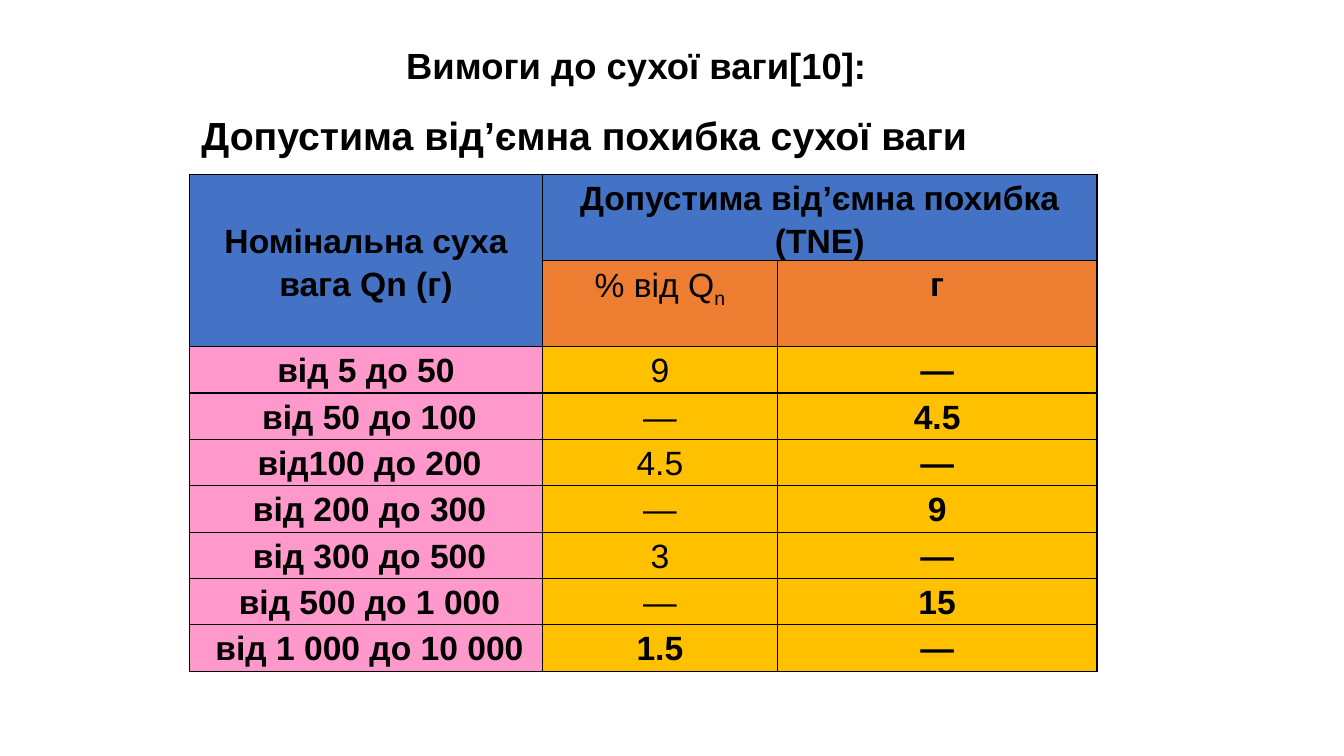
import pptx
import pptx.dml.color
import pptx.enum.text
import pptx.oxml
import pptx.oxml.ns
import pptx.util

Inches = pptx.util.Inches
Pt = pptx.util.Pt
Align = pptx.enum.text.PP_ALIGN
Anchor = pptx.enum.text.MSO_ANCHOR
AutoSize = pptx.enum.text.MSO_AUTO_SIZE

BLACK, BLUE, ORANGE, PINK, GOLD = "000000", "4472C4", "ED7D31", "FF99CC", "FFC000"


def color(value):
    return pptx.dml.color.RGBColor.from_string(value)


class SlideBuilder:
    font_name = "Arial"
    cell_size = 24

    def __init__(self, slide):
        self.slide = slide

    def style_run(self, run, size, bold=True):
        run.font.name = self.font_name
        run.font.size = Pt(size)
        run.font.bold = bold
        run.font.color.rgb = color(BLACK)

    def heading(self, text, left, top, width, height, size, wrap=True, align=None):
        box = self.slide.shapes.add_textbox(
            Inches(left), Inches(top), Inches(width), Inches(height))
        frame = box.text_frame
        frame.word_wrap = wrap
        frame.auto_size = AutoSize.SHAPE_TO_FIT_TEXT
        frame.text = text
        frame.paragraphs[0].alignment = align
        self.style_run(frame.paragraphs[0].runs[0], size)

    def table(self, left, top, height, widths, heights):
        frame = self.slide.shapes.add_table(
            len(heights), len(widths), Inches(left), Inches(top),
            Inches(sum(widths)), Inches(height))
        table = frame.table
        for column, width in zip(table.columns, widths):
            column.width = Inches(width)
        for row, row_height in zip(table.rows, heights):
            row.height = Inches(row_height)
        frame.height = Inches(height)
        for cell in table.iter_cells():
            self.borders(cell)
        return table

    def borders(self, cell):
        properties = cell._tc.get_or_add_tcPr()
        for side in ("lnL", "lnR", "lnT", "lnB"):
            properties.append(pptx.oxml.parse_xml(
                f'<a:{side} {pptx.oxml.ns.nsdecls("a")} w="{Pt(1)}"><a:solidFill>'
                f'<a:srgbClr val="{BLACK}"/></a:solidFill></a:{side}>'))

    def cell(self, cell, text, fill, bold=True, anchor=Anchor.TOP, indent=0, subscript=""):
        cell.fill.solid()
        cell.fill.fore_color.rgb = color(fill)
        cell.vertical_anchor = anchor
        cell.margin_left = cell.margin_right = Inches(0.07)
        cell.margin_top = cell.margin_bottom = 0
        cell.text_frame.text = text
        paragraph = cell.text_frame.paragraphs[0]
        paragraph.alignment = Align.CENTER
        paragraph.line_spacing = 1.15
        paragraph.space_before = paragraph.space_after = Pt(3)
        if indent:
            paragraph._p.get_or_add_pPr().set("marL", str(Inches(indent)))
        if subscript:
            lowered = paragraph.add_run()
            lowered.text = subscript
            lowered._r.get_or_add_rPr().set("baseline", "-25000")
        for run in paragraph.runs:
            self.style_run(run, self.cell_size, bold)


def main():
    presentation = pptx.Presentation()
    presentation.slide_width = Inches(13.33)
    presentation.slide_height = Inches(7.5)
    builder = SlideBuilder(presentation.slides.add_slide(presentation.slide_layouts[6]))

    weights = [
        ("від 5 до 50", "9", "—"),
        ("від 50 до 100", "—", "4.5"),
        ("від100 до 200", "4.5", "—"),
        ("від 200 до 300", "—", "9"),
        ("від 300 до 500", "3", "—"),
        ("від 500 до 1 000", "—", "15"),
        ("від 1 000 до 10 000", "1.5", "—"),
    ]

    # Table header
    errors = builder.table(1.88, 1.73, 4.6, [3.5, 2.33, 3.17],
                           [0.59] + [0.46] * (len(weights) + 1))
    errors.cell(0, 0).merge(errors.cell(1, 0))
    errors.cell(0, 1).merge(errors.cell(0, 2))
    builder.cell(errors.cell(0, 0), "Номінальна суха вага Qn (г)", BLUE, anchor=Anchor.MIDDLE)
    builder.cell(errors.cell(0, 1), "Допустима від’ємна похибка (TNE)", BLUE,
                 anchor=Anchor.MIDDLE)
    builder.cell(errors.cell(1, 1), "% від Q", ORANGE, bold=False, subscript="n")
    builder.cell(errors.cell(1, 2), "г", ORANGE)

    # Weight ranges; the last percentage is bold
    for row, (weight, percent, grams) in enumerate(weights, start=2):
        builder.cell(errors.cell(row, 0), weight, PINK, indent=0 if row == 2 else 0.07)
        builder.cell(errors.cell(row, 1), percent, GOLD, bold=row == len(weights) + 1)
        builder.cell(errors.cell(row, 2), grams, GOLD)

    # Headings
    builder.heading("Допустима від’ємна похибка сухої ваги", 1.9, 1.06, 8.98, 0.57, 28)
    builder.heading("Вимоги до сухої ваги[10]: ", 3.93, 0.38, 4.92, 0.54, 26,
                    wrap=False, align=Align.JUSTIFY)

    presentation.save("out.pptx")


if __name__ == "__main__":
    main()
